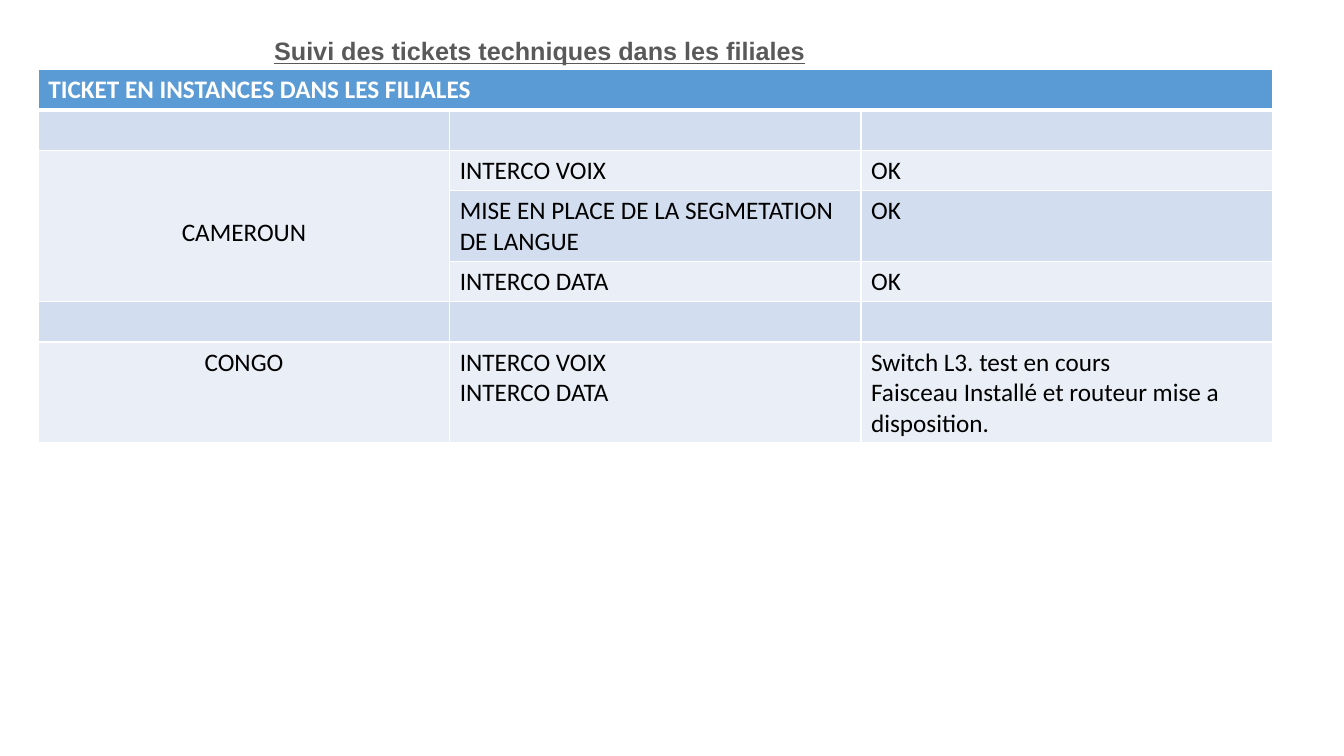
from lxml.etree import SubElement
from pptx import Presentation
from pptx.dml.color import RGBColor
from pptx.enum.text import MSO_ANCHOR as Anchor, PP_ALIGN as Align
from pptx.oxml.ns import qn
from pptx.util import Inches, Pt

# Content
TITLE = "Suivi des tickets techniques dans les filiales"
HEADING = "TICKET EN INSTANCES DANS LES FILIALES"
TICKETS = [
    (HEADING, "", ""),
    ("", "", ""),
    ("CAMEROUN", "INTERCO VOIX", "OK"),
    ("", "MISE EN PLACE DE LA SEGMETATION DE LANGUE", "OK"),
    ("", "INTERCO DATA", "OK"),
    ("", "", ""),
    ("CONGO", "INTERCO VOIX\nINTERCO DATA",
     "Switch L3. test en cours\nFaisceau Installé et routeur mise a disposition."),
]
MERGES = [((0, 0), (0, 2)), ((2, 0), (4, 0))]

# Layout and formats
ROW_HEIGHTS = [0.4, 0.4, 0.4, 0.7, 0.4, 0.4, 1.0]
COLUMN_WIDTH = 4.08
HEADER_FILL, BAND_FILLS = "5B9BD5", ("EAEFF7", "D2DEEF")
BORDER = "FFFFFF"
TITLE_FORMAT = {"name": "Arial", "size": Pt(18), "bold": True,
                "underline": True, "color": "595959"}
BODY_FORMAT = {"name": "Calibri", "size": Pt(18), "bold": False,
               "color": "000000"}
HEADER_FORMAT = {**BODY_FORMAT, "bold": True, "color": "FFFFFF"}


def paint(color_format, hex_color):
    color_format.rgb = RGBColor.from_string(hex_color)


def write(frame, text, formats, align):
    frame.text = text
    for paragraph in frame.paragraphs:
        paragraph.alignment = align
        for run in paragraph.runs:
            for key, value in formats.items():
                if key == "color":
                    run.font.fill.solid()
                    paint(run.font.fill.fore_color, value)
                else:
                    setattr(run.font, key, value)


def fill_cell(cell, hex_color, bottom_width, top_width):
    properties = cell._tc.get_or_add_tcPr()
    widths = {"lnL": 1, "lnR": 1, "lnT": top_width, "lnB": bottom_width}
    for side, width in widths.items():
        line = SubElement(properties, qn(f"a:{side}"), w=str(Pt(width)))
        solid = SubElement(line, qn("a:solidFill"))
        SubElement(solid, qn("a:srgbClr"), val=BORDER)
    cell.fill.solid()
    paint(cell.fill.fore_color, hex_color)


def main():
    deck = Presentation()
    deck.slide_width, deck.slide_height = Inches(13.33), Inches(7.5)
    slide = deck.slides.add_slide(deck.slide_layouts[6])

    # Title
    title = slide.shapes.add_textbox(
        Inches(2.62), Inches(0.3), Inches(5.52), Inches(0.4)).text_frame
    title.word_wrap = False
    title.vertical_anchor = Anchor.MIDDLE
    write(title, TITLE, TITLE_FORMAT, Align.JUSTIFY)

    # Ticket table
    tickets = slide.shapes.add_table(
        len(TICKETS), 3, Inches(0.38), Inches(0.69),
        Inches(3 * COLUMN_WIDTH), Inches(sum(ROW_HEIGHTS))).table
    tickets.horz_banding = False
    for column in tickets.columns:
        column.width = Inches(COLUMN_WIDTH)
    for row, height in zip(tickets.rows, ROW_HEIGHTS):
        row.height = Inches(height)

    for r, ticket in enumerate(TICKETS):
        for c, text in enumerate(ticket):
            cell = tickets.cell(r, c)
            header = r == 0
            # A country keeps the fill of its first row
            band = BAND_FILLS[0 if c == 0 and 2 <= r <= 4 else r % 2]
            fill_cell(cell, HEADER_FILL if header else band,
                      3 if header else 1, 3 if r == 1 else 1)
            write(cell.text_frame, text,
                  HEADER_FORMAT if header else BODY_FORMAT,
                  Align.CENTER if c == 0 and not header else Align.LEFT)

    for first, last in MERGES:
        tickets.cell(*first).merge(tickets.cell(*last))

    # The first country sits just below the middle of its three rows
    cameroun = tickets.cell(2, 0)
    cameroun.vertical_anchor = Anchor.MIDDLE
    cameroun.margin_top = Inches(0.18)

    deck.save("out.pptx")


if __name__ == "__main__":
    main()
